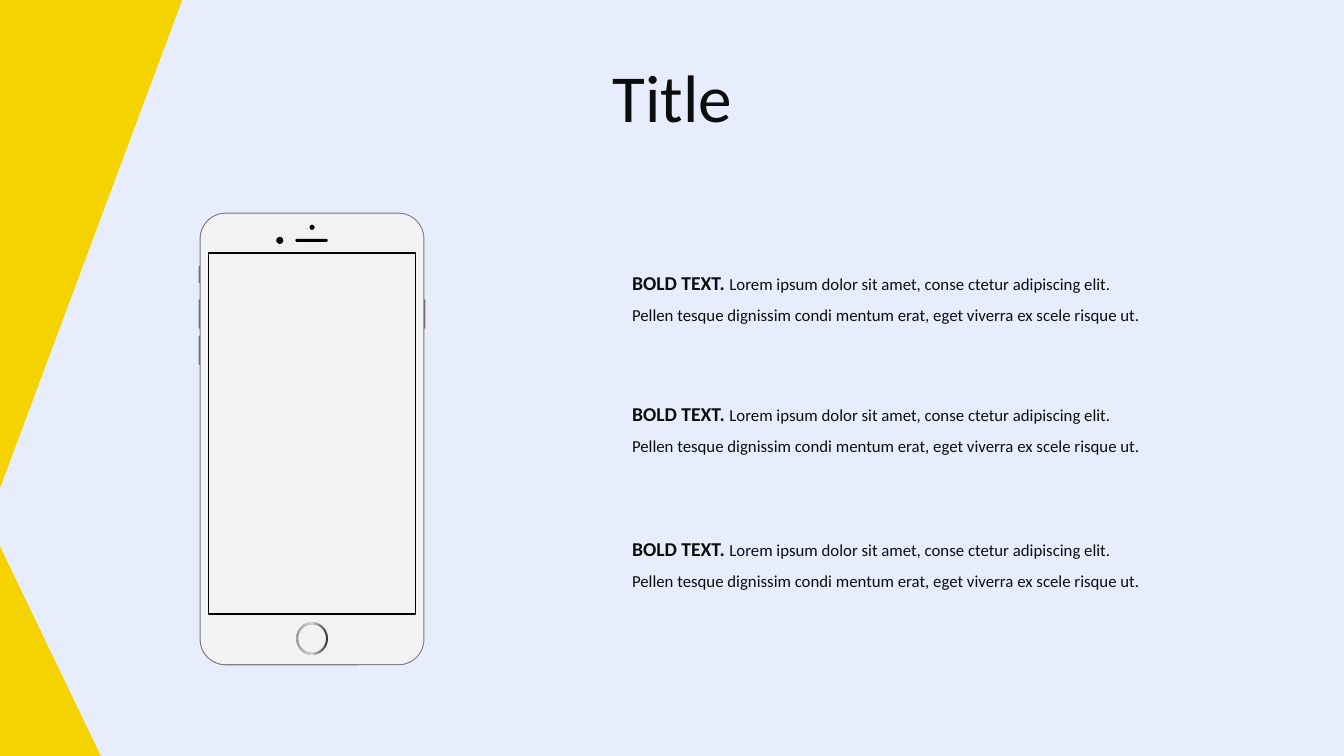
from dataclasses import dataclass

from lxml import etree
from pptx import Presentation
from pptx import util as u
from pptx.dml.color import RGBColor
from pptx.enum import shapes, text
from pptx.oxml.ns import qn


@dataclass(frozen=True)
class Theme:
    font: str = "Calibri"
    background: str = "E7EDFD"
    accent: str = "F4D300"
    ink: str = "0D0D0D"
    black: str = "000000"
    edge: str = "767171"
    face: str = "F2F2F2"
    title_size: int = 48
    lead_size: int = 14
    body_size: int = 12
    ring: tuple = ((0, "979797", 100), (50, "D7D7D7", 100), (100, "000000", 80))


THEME = Theme()
LEAD = "BOLD TEXT. "
BODY = (
    "Lorem ipsum dolor sit amet, conse ctetur adipiscing elit. "
    "Pellen tesque dignissim condi mentum erat, eget viverra ex scele risque ut."
)


def rgb(value):
    return RGBColor.from_string(value)


def add_part(parent, kind, box, color, radius=None):
    part = parent.add_shape(kind, *(u.Inches(length) for length in box))
    part.shadow.inherit = False
    part.line.fill.background()
    part.fill.solid()
    part.fill.fore_color.rgb = rgb(color)
    if radius is not None:
        part.adjustments[0] = radius / min(box[2:])
    return part


def shade_ring(ring):
    ring.fill.gradient()
    ring.fill.gradient_angle = 0
    stops = ring._element.spPr.find(qn("a:gradFill")).find(qn("a:gsLst"))
    for stop in list(stops):
        stops.remove(stop)
    for position, color, opacity in THEME.ring:
        stop = etree.SubElement(stops, qn("a:gs"), pos=str(position * 1000))
        shade = etree.SubElement(stop, qn("a:srgbClr"), val=color)
        if opacity < 100:
            etree.SubElement(shade, qn("a:alpha"), val=str(opacity * 1000))


def add_corners(slide, left, top, width, height):
    triangle = shapes.MSO_SHAPE.RIGHT_TRIANGLE
    add_part(slide.shapes, triangle, (left, top + height - 2.08, 1, 2.08), THEME.accent)
    upper = add_part(slide.shapes, triangle, (left, top - 0.01, 1.81, 4.85), THEME.accent)
    upper.rotation = 180
    upper._element.spPr.find(qn("a:xfrm")).set("flipH", "1")


def add_phone(slide, left, top, width, height):
    phone = slide.shapes.add_group_shape().shapes
    rounded = shapes.MSO_SHAPE.ROUNDED_RECTANGLE
    oval = shapes.MSO_SHAPE.OVAL
    right_side = left + width - 0.02
    buttons = (
        (left, 0.53, 0.17),
        (left, 0.86, 0.29),
        (left, 1.22, 0.29),
        (right_side, 0.86, 0.29),
    )
    for button_left, offset, length in buttons:
        add_part(phone, rounded, (button_left, top + offset, 0.02, length), THEME.edge, 0.01)
    add_part(phone, rounded, (left + 0.01, top, width - 0.02, height), THEME.edge, 0.26)
    add_part(
        phone, rounded, (left + 0.02, top + 0.01, width - 0.04, height - 0.02), THEME.face, 0.25
    )
    add_part(phone, oval, (left + 0.77, top + 0.24, 0.07, 0.07), THEME.black)
    add_part(phone, oval, (left + 1.1, top + 0.12, 0.05, 0.05), THEME.black)
    add_part(phone, rounded, (left + 0.96, top + 0.26, 0.32, 0.03), THEME.black, 0.015)
    home = add_part(
        phone, shapes.MSO_SHAPE.DONUT, (left + 0.97, top + 4.07, 0.31, 0.31), THEME.edge, 0.02
    )
    shade_ring(home)
    screen = add_part(
        slide.shapes,
        shapes.MSO_SHAPE.RECTANGLE,
        (left + 0.1, top + 0.4, width - 0.2, 3.58),
        THEME.face,
    )
    screen.fill.background()
    screen.line.color.rgb = rgb(THEME.black)
    screen.line.width = u.Pt(1)


def style_paragraph(paragraph):
    paragraph.font.name = THEME.font
    paragraph.font.color.rgb = rgb(THEME.ink)


def add_title(slide, left, top, width, height):
    title = slide.shapes.title
    title.left, title.top = u.Inches(left), u.Inches(top)
    title.width, title.height = u.Inches(width), u.Inches(height)
    title.text_frame.text = "Title"
    title.text_frame.auto_size = text.MSO_AUTO_SIZE.SHAPE_TO_FIT_TEXT
    heading = title.text_frame.paragraphs[0]
    heading.alignment = text.PP_ALIGN.CENTER
    style_paragraph(heading)
    heading.font.size = u.Pt(THEME.title_size)


def add_point(slide, left, top, width, height):
    point = slide.shapes.add_textbox(*(u.Inches(n) for n in (left, top, width, height)))
    point.text_frame.word_wrap = True
    point.text_frame.auto_size = text.MSO_AUTO_SIZE.SHAPE_TO_FIT_TEXT
    paragraph = point.text_frame.paragraphs[0]
    paragraph.line_spacing = 1.5
    style_paragraph(paragraph)
    for words, size, bold in ((LEAD, THEME.lead_size, True), (BODY, THEME.body_size, False)):
        run = paragraph.add_run()
        run.text = words
        run.font.size = u.Pt(size)
        run.font.bold = bold


def main():
    deck = Presentation()
    deck.slide_width, deck.slide_height = u.Inches(13.33), u.Inches(7.5)
    slide = deck.slides.add_slide(deck.slide_layouts[5])
    slide.background.fill.solid()
    slide.background.fill.fore_color.rgb = rgb(THEME.background)
    add_corners(slide, 0, 0, 13.33, 7.5)
    add_phone(slide, 1.97, 2.11, 2.25, 4.49)
    add_title(slide, 3.06, 0.49, 7.22, 0.91)
    for point_top in (2.52, 3.82, 5.16):
        add_point(slide, 6.17, point_top, 5.38, 0.73)
    deck.save("out.pptx")


if __name__ == "__main__":
    main()
